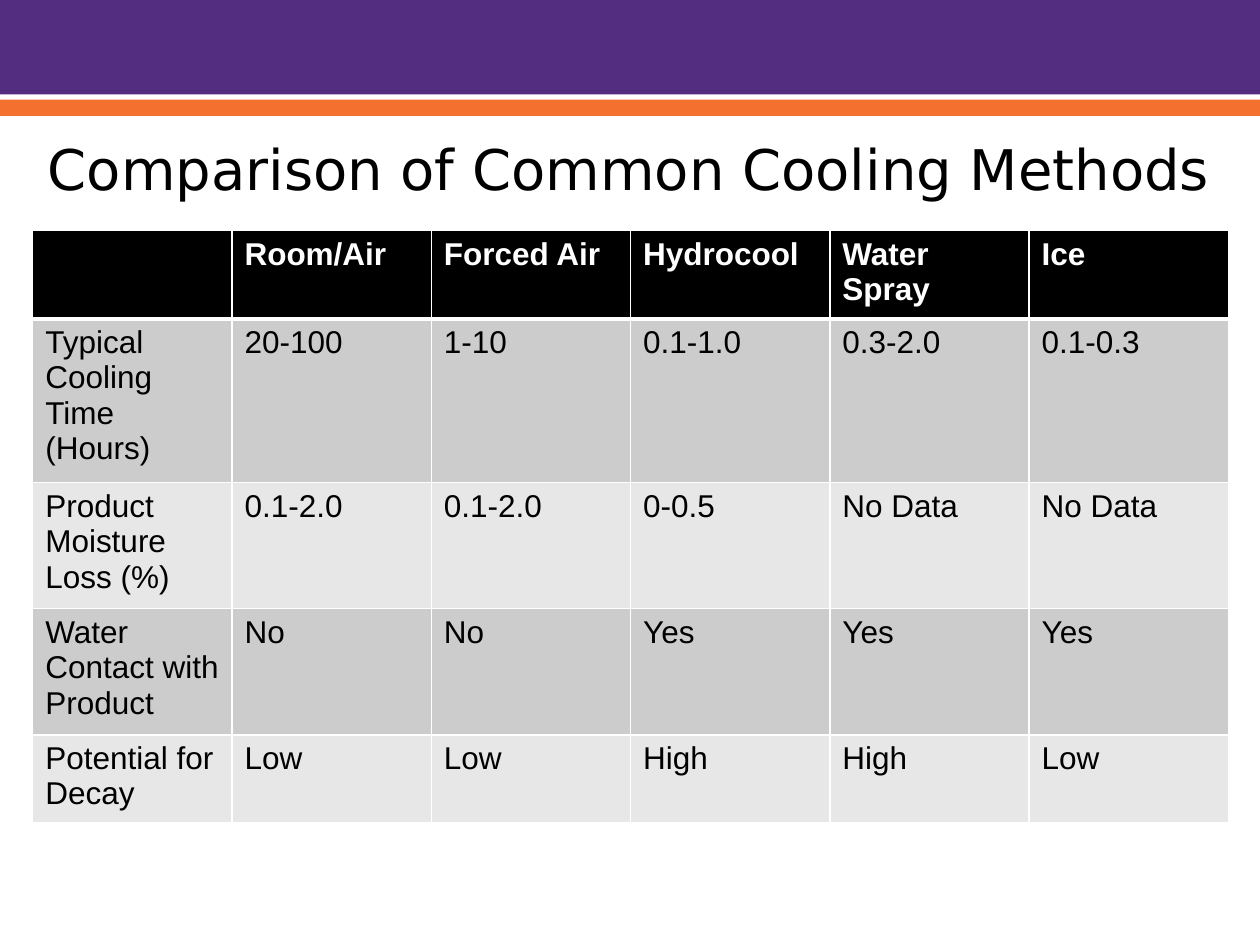
from dataclasses import dataclass

from lxml import etree
from pptx import Presentation
from pptx.dml.color import RGBColor
from pptx.enum.shapes import MSO_SHAPE
from pptx.enum.text import MSO_ANCHOR, PP_ALIGN
from pptx.oxml.ns import qn
from pptx.util import Inches, Pt

RECT = MSO_SHAPE.RECTANGLE
MIDDLE = MSO_ANCHOR.MIDDLE
CENTER = PP_ALIGN.CENTER

PURPLE = RGBColor(0x52, 0x2D, 0x80)
ORANGE = RGBColor(0xF4, 0x70, 0x2F)
BLACK = RGBColor(0x00, 0x00, 0x00)
WHITE = RGBColor(0xFF, 0xFF, 0xFF)
DARK_BAND = RGBColor(0xCC, 0xCC, 0xCC)
LIGHT_BAND = RGBColor(0xE7, 0xE7, 0xE7)

TITLE_FONT = "DejaVu Sans"
TABLE_FONT = "Arial"
CONTENT_WIDTH = 9.49
ROW_HEIGHT = 0.41

METHODS = [
    ["", "Room/Air", "Forced Air", "Hydrocool", "Water Spray", "Ice"],
    ["Typical Cooling Time (Hours)", "20-100", "1-10", "0.1-1.0", "0.3-2.0", "0.1-0.3"],
    ["Product Moisture Loss (%)", "0.1-2.0", "0.1-2.0", "0-0.5", "No Data", "No Data"],
    ["Water Contact with Product", "No", "No", "Yes", "Yes", "Yes"],
    ["Potential for Decay", "Low", "Low", "High", "High", "Low"],
]


@dataclass
class Band:
    top: float
    height: float
    color: RGBColor


HEADER_BANDS = [Band(-0.17, 0.92, PURPLE), Band(0.79, 0.13, ORANGE)]


def add_band(s, band: Band) -> None:
    shape = s.shapes.add_shape(
        RECT, Inches(-0.25), Inches(band.top), Inches(10.67), Inches(band.height))
    shape.shadow.inherit = False
    shape.fill.solid()
    shape.fill.fore_color.rgb = band.color
    shape.line.fill.background()


def format_runs(tf, font: str, size: int, color: RGBColor, bold: bool = False) -> None:
    for p in tf.paragraphs:
        p.font.size = Pt(size)
        for r in p.runs:
            r.font.name = font
            r.font.size = Pt(size)
            r.font.bold = bold
            r.font.color.rgb = color


def add_title(s, text: str) -> None:
    box = s.shapes.add_textbox(
        Inches(0.25), Inches(1), Inches(CONTENT_WIDTH), Inches(0.67))
    tf = box.text_frame
    tf.word_wrap = True
    tf.vertical_anchor = MIDDLE
    tf.margin_left = tf.margin_right = Inches(0.05)
    tf.text = text
    tf.paragraphs[0].alignment = CENTER
    format_runs(tf, TITLE_FONT, 32, BLACK)


def set_borders(cell, top: int, bottom: int) -> None:
    """Draw white borders, 1 pt wide at the sides."""
    tc_pr = cell._tc.get_or_add_tcPr()
    widths = {"a:lnL": 1, "a:lnR": 1, "a:lnT": top, "a:lnB": bottom}
    for i, (tag, width) in enumerate(widths.items()):
        ln = etree.Element(qn(tag), w=str(Pt(width)))
        fill = etree.SubElement(ln, qn("a:solidFill"))
        etree.SubElement(fill, qn("a:srgbClr"), val=str(WHITE))
        tc_pr.insert(i, ln)


def add_methods_table(s, rows: list[list[str]]) -> None:
    n_rows, n_cols = len(rows), len(rows[0])
    table = s.shapes.add_table(
        n_rows, n_cols, Inches(0.26), Inches(1.83),
        Inches(CONTENT_WIDTH), Inches(ROW_HEIGHT * n_rows)).table
    for i, row in enumerate(rows):
        header = i == 0
        band = BLACK if header else DARK_BAND if i % 2 else LIGHT_BAND
        for j, text in enumerate(row):
            cell = table.cell(i, j)
            cell.fill.solid()
            cell.fill.fore_color.rgb = band
            set_borders(cell, top=3 if i == 1 else 1, bottom=3 if header else 1)
            cell.text_frame.text = text
            format_runs(cell.text_frame, TABLE_FONT, 18,
                        WHITE if header else BLACK, bold=header)


def main() -> None:
    prs = Presentation()
    prs.slide_width, prs.slide_height = Inches(10), Inches(7.5)
    s = prs.slides.add_slide(prs.slide_layouts[6])

    # Header bands, bleeding past the slide edges
    for band in HEADER_BANDS:
        add_band(s, band)

    # Title and comparison table
    add_title(s, "Comparison of Common Cooling Methods")
    add_methods_table(s, METHODS)

    prs.save("out.pptx")


if __name__ == "__main__":
    main()
